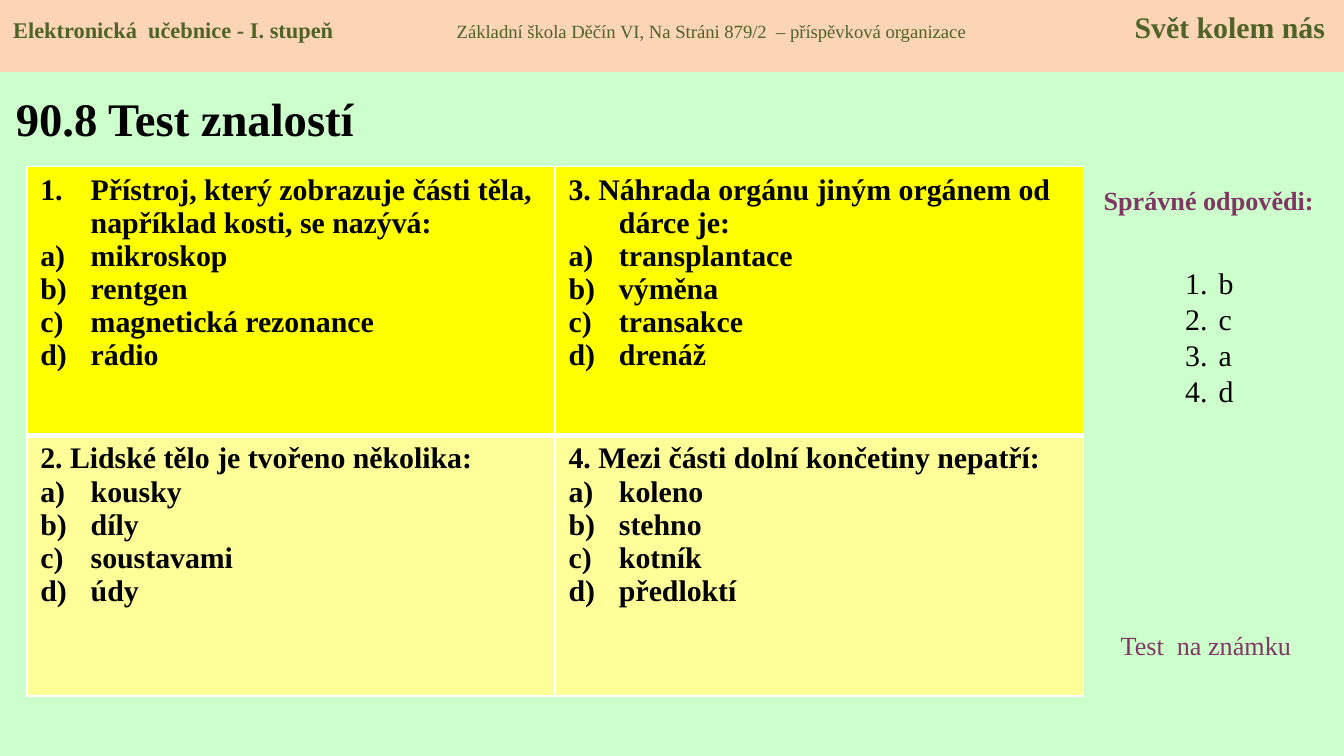
from dataclasses import dataclass

from lxml.etree import SubElement
from pptx import Presentation
from pptx.dml.color import RGBColor
from pptx.enum.shapes import MSO_SHAPE
from pptx.enum.text import MSO_ANCHOR, PP_ALIGN
from pptx.oxml import parse_xml
from pptx.oxml.ns import nsdecls, qn
from pptx.slide import Slide
from pptx.table import _Cell
from pptx.util import Pt

FONT = "Times New Roman"
COLORS = {
    "background": "CCFFCC",
    "banner": "FCD5B5",
    "banner text": "4F6228",
    "text": "000000",
    "accent": "813763",
    "top row": "FFFF00",
    "bottom row": "FFFF99",
    "border": "FFFFFF",
}


@dataclass
class Style:
    size: float
    color: str = "text"
    bold: bool = False


@dataclass
class Label:
    text: str
    left: float
    top: float
    width: float
    height: float
    style: Style
    align: PP_ALIGN = PP_ALIGN.LEFT
    anchor: MSO_ANCHOR = MSO_ANCHOR.TOP


@dataclass
class Question:
    text: str
    options: list[str]
    numbered: bool = False


TITLE = Label("90.8 Test znalostí", 1.4, 39.6, 229.7, 46.8,
              Style(25, bold=True), anchor=MSO_ANCHOR.MIDDLE)
ANSWERS_HEADING = Label("Správné odpovědi:", 579.6, 95, 136, 24.5,
                        Style(14, "accent", True), PP_ALIGN.CENTER)
ANSWERS = Label("b\nc\na\nd", 627.8, 138.5, 39.6, 124, Style(16))
GRADE_NOTE = Label("Test  na známku", 593.3, 333.4, 113, 24.5, Style(14, "accent"))

BANNER_PARTS = [
    ("Elektronická  učebnice - I. stupeň", Style(12, "banner text", True)),
    ("\tZákladní škola Děčín VI, Na Stráni 879/2  – příspěvková organizace",
     Style(10, "banner text")),
    ("\tSvět kolem nás", Style(16, "banner text", True)),
]
BANNER_TABS = [237.6, 600.8]

QUESTIONS = [
    [
        Question("Přístroj, který zobrazuje části těla, například kosti, se nazývá:",
                 ["mikroskop", "rentgen", "magnetická rezonance", "rádio"], True),
        Question("3. Náhrada orgánu jiným orgánem od dárce je:",
                 ["transplantace", "výměna", "transakce", "drenáž"]),
    ],
    [
        Question("2. Lidské tělo je tvořeno několika:",
                 ["kousky", "díly", "soustavami", "údy"]),
        Question("4. Mezi části dolní končetiny nepatří:",
                 ["koleno", "stehno", "kotník", "předloktí"]),
    ],
]
ROW_HEIGHTS = [144, 139.7]
ROW_FILLS = ["top row", "bottom row"]
COLUMN_WIDTH = 283


def rgb(name: str) -> RGBColor:
    return RGBColor.from_string(COLORS[name])


def format_run(run, style: Style) -> None:
    run.font.name = FONT
    run.font.size = Pt(style.size)
    run.font.bold = style.bold
    run.font.color.rgb = rgb(style.color)


def hang(paragraph, indent: float, numbering: str = "") -> None:
    properties = paragraph._p.get_or_add_pPr()
    properties.set("marL", str(Pt(indent)))
    properties.set("indent", str(-Pt(indent)))
    if numbering:
        SubElement(properties, qn("a:buAutoNum"), type=numbering)


def add_label(slide: Slide, label: Label):
    box = slide.shapes.add_textbox(Pt(label.left), Pt(label.top),
                                   Pt(label.width), Pt(label.height))
    frame = box.text_frame
    frame.word_wrap = True
    frame.vertical_anchor = label.anchor
    frame.text = label.text
    for paragraph in frame.paragraphs:
        paragraph.alignment = label.align
        format_run(paragraph.runs[0], label.style)
    return frame


def add_banner(slide: Slide) -> None:
    banner = slide.shapes.add_shape(MSO_SHAPE.RECTANGLE, 0, 0, Pt(720), Pt(38.6))
    banner.shadow.inherit = False
    banner.fill.solid()
    banner.fill.fore_color.rgb = rgb("banner")
    banner.line.fill.background()
    frame = banner.text_frame
    frame.vertical_anchor = MSO_ANCHOR.TOP
    frame.margin_top = Pt(4.5)
    paragraph = frame.paragraphs[0]
    paragraph.alignment = PP_ALIGN.LEFT
    tabs = SubElement(paragraph._p.get_or_add_pPr(), qn("a:tabLst"))
    for position in BANNER_TABS:
        SubElement(tabs, qn("a:tab"), pos=str(Pt(position)), algn="l")
    for text, style in BANNER_PARTS:
        run = paragraph.add_run()
        run.text = text
        format_run(run, style)


def set_borders(cell: _Cell, widths: dict[str, float]) -> None:
    properties = cell._tc.get_or_add_tcPr()
    for index, (side, width) in enumerate(widths.items()):
        properties.insert(index, parse_xml(
            f'<a:ln{side} {nsdecls("a")} w="{Pt(width)}"><a:solidFill>'
            f'<a:srgbClr val="{COLORS["border"]}"/></a:solidFill></a:ln{side}>'))


def fill_question(cell: _Cell, question: Question) -> None:
    cell.text_frame.text = "\n".join([question.text, *question.options])
    heading, *options = cell.text_frame.paragraphs
    hang(heading, 27, "arabicPeriod" if question.numbered else "")
    for option in options:
        hang(option, 27, "alphaLcParenR")
    for paragraph in cell.text_frame.paragraphs:
        format_run(paragraph.runs[0], Style(16, bold=True))


def add_questions(slide: Slide) -> None:
    table = slide.shapes.add_table(2, 2, Pt(14.4), Pt(89.3), Pt(2 * COLUMN_WIDTH),
                                   Pt(sum(ROW_HEIGHTS))).table
    table.first_row = table.horz_banding = False
    for column in table.columns:
        column.width = Pt(COLUMN_WIDTH)
    for row, questions in enumerate(QUESTIONS):
        table.rows[row].height = Pt(ROW_HEIGHTS[row])
        top, bottom = (1, 3) if row == 0 else (3, 1)
        for column, question in enumerate(questions):
            cell = table.cell(row, column)
            cell.fill.solid()
            cell.fill.fore_color.rgb = rgb(ROW_FILLS[row])
            set_borders(cell, {"L": 1, "R": 1, "T": top, "B": bottom})
            fill_question(cell, question)


def main() -> None:
    presentation = Presentation()
    presentation.slide_width = Pt(720)
    presentation.slide_height = Pt(405)
    slide = presentation.slides.add_slide(presentation.slide_layouts[6])
    slide.background.fill.solid()
    slide.background.fill.fore_color.rgb = rgb("background")
    add_label(slide, TITLE)
    add_label(slide, ANSWERS_HEADING)
    add_questions(slide)
    for answer in add_label(slide, ANSWERS).paragraphs:
        hang(answer, 18, "arabicPeriod")
    add_label(slide, GRADE_NOTE)
    add_banner(slide)
    presentation.save("out.pptx")


if __name__ == "__main__":
    main()
